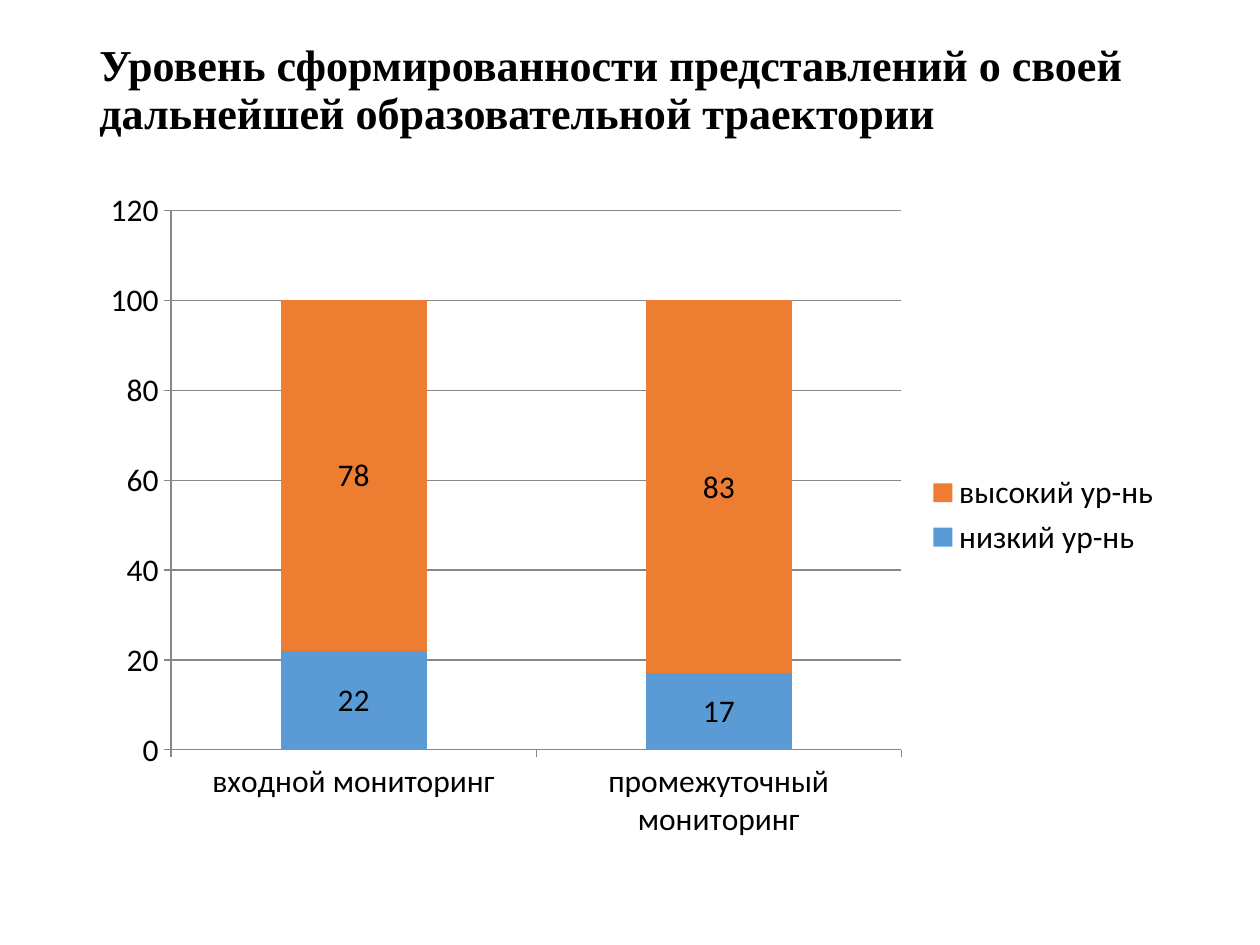
from dataclasses import dataclass

import pptx
import pptx.chart.axis
import pptx.chart.data
import pptx.chart.series
import pptx.dml.color
import pptx.enum.chart
import pptx.enum.text
import pptx.slide
import pptx.util

PX_PER_INCH = 126


@dataclass(frozen=True)
class Theme:
    ink: str = "000000"
    rule: str = "878787"
    low: str = "5B9BD5"
    high: str = "ED7D31"
    title_font: str = "Times New Roman"
    chart_font: str = "Calibri"
    title_size: float = 25.2
    chart_size: int = 18
    rule_width: float = 0.75


@dataclass(frozen=True)
class Area:
    left: int
    top: int
    width: int
    height: int

    def emu(self) -> list[int]:
        return [px(n) for n in (self.left, self.top, self.width, self.height)]


@dataclass(frozen=True)
class Level:
    name: str
    values: tuple[int, ...]
    color: str


THEME = Theme()
TITLE = "Уровень сформированности представлений о своей дальнейшей образовательной траектории"
TITLE_AREA = Area(87, 23, 1086, 137)
CHART_AREA = Area(89, 178, 1085, 674)
STAGES = ("входной мониторинг", "промежуточный мониторинг")
LEVELS = (
    Level("низкий ур-нь", (22, 17), THEME.low),
    Level("высокий ур-нь", (78, 83), THEME.high),
)


def px(length: int) -> int:
    return round(length * pptx.util.Inches(1) / PX_PER_INCH)


def rgb(color: str) -> pptx.dml.color.RGBColor:
    return pptx.dml.color.RGBColor.from_string(color)


def add_title(page: pptx.slide.Slide) -> None:
    box = page.shapes.add_textbox(*TITLE_AREA.emu())
    frame = box.text_frame
    frame.word_wrap = True
    frame.vertical_anchor = pptx.enum.text.MSO_ANCHOR.MIDDLE
    para = frame.paragraphs[0]
    para.line_spacing = 0.9
    span = para.add_run()
    span.text = TITLE
    span.font.name = THEME.title_font
    span.font.size = pptx.util.Pt(THEME.title_size)
    span.font.bold = True
    span.font.color.rgb = rgb(THEME.ink)


def style_axis(axis: pptx.chart.axis._BaseAxis) -> None:
    axis.major_tick_mark = pptx.enum.chart.XL_TICK_MARK.OUTSIDE
    axis.minor_tick_mark = pptx.enum.chart.XL_TICK_MARK.NONE
    style_rule(axis.format.line)


def style_rule(line: pptx.dml.line.LineFormat) -> None:
    line.color.rgb = rgb(THEME.rule)
    line.width = pptx.util.Pt(THEME.rule_width)


def style_series(series: pptx.chart.series.BarSeries, level: Level) -> None:
    series.format.fill.solid()
    series.format.fill.fore_color.rgb = rgb(level.color)
    labels = series.data_labels
    labels.show_value = True
    labels.position = pptx.enum.chart.XL_LABEL_POSITION.CENTER


def add_level_chart(page: pptx.slide.Slide) -> None:
    data = pptx.chart.data.CategoryChartData()
    data.categories = STAGES
    for level in LEVELS:
        data.add_series(level.name, level.values)
    kind = pptx.enum.chart.XL_CHART_TYPE.COLUMN_STACKED
    chart = page.shapes.add_chart(kind, *CHART_AREA.emu(), data).chart

    # Text and legend
    chart.has_title = False
    chart.font.name = THEME.chart_font
    chart.font.size = pptx.util.Pt(THEME.chart_size)
    chart.font.color.rgb = rgb(THEME.ink)
    chart.has_legend = True
    chart.legend.position = pptx.enum.chart.XL_LEGEND_POSITION.RIGHT
    chart.legend.include_in_layout = False

    # Axes and gridlines
    for axis in (chart.category_axis, chart.value_axis):
        style_axis(axis)
    scale = chart.value_axis
    scale.minimum_scale, scale.maximum_scale, scale.major_unit = 0, 120, 20
    scale.has_major_gridlines = True
    style_rule(scale.major_gridlines.format.line)

    # Stacked columns
    plot = chart.plots[0]
    plot.vary_by_categories = False
    plot.gap_width = 150
    plot.overlap = 100
    for series, level in zip(plot.series, LEVELS):
        style_series(series, level)


def main() -> None:
    deck = pptx.Presentation()
    deck.slide_width, deck.slide_height = px(1260), px(945)
    page = deck.slides.add_slide(deck.slide_layouts[6])
    add_title(page)
    add_level_chart(page)
    deck.save("out.pptx")


if __name__ == "__main__":
    main()
